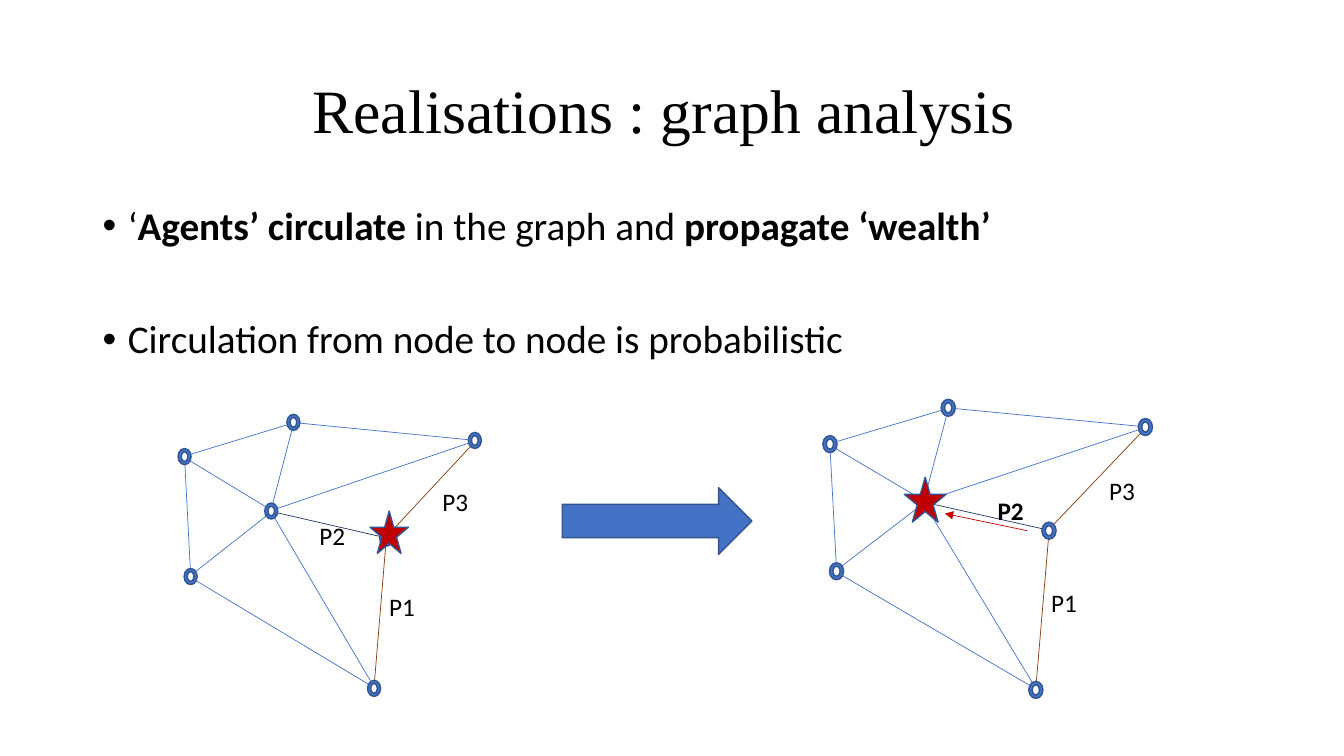
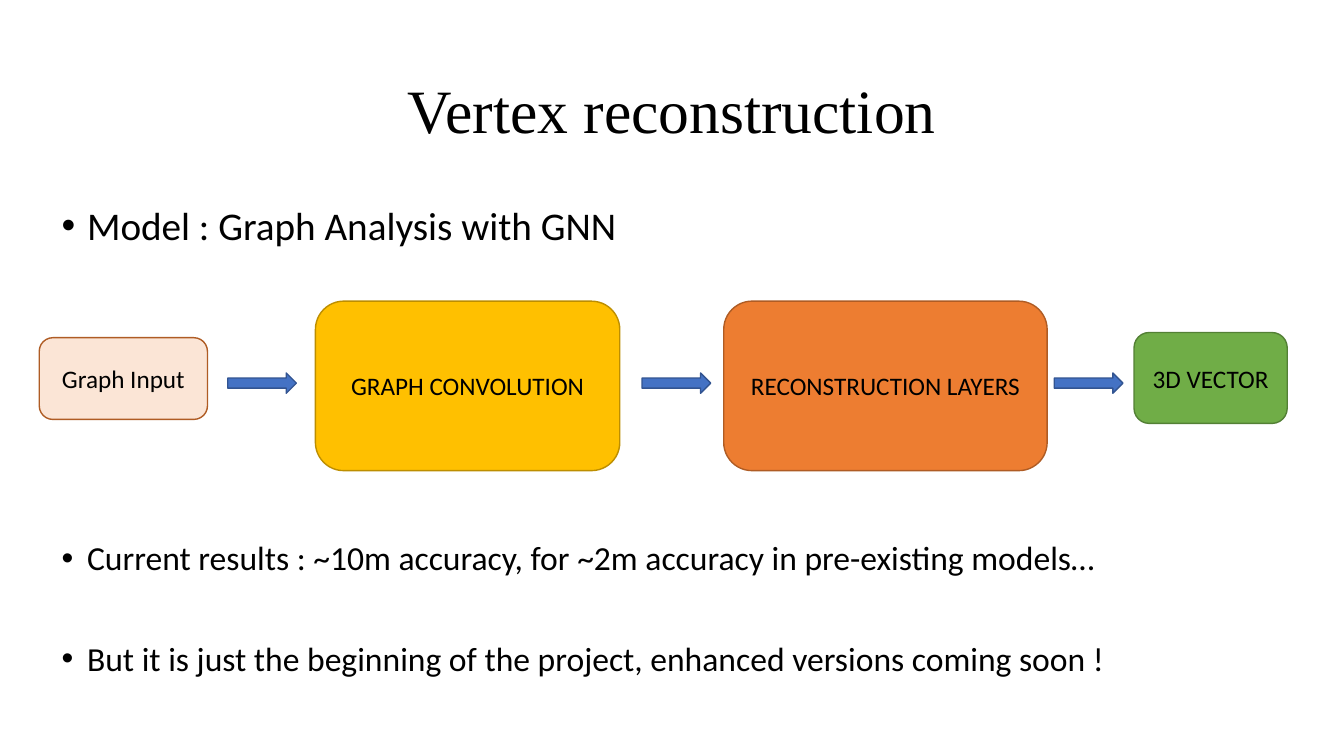
from math import hypot

from lxml.etree import SubElement
from pptx import Presentation
from pptx.dml.color import RGBColor
from pptx.enum.shapes import MSO_CONNECTOR, MSO_SHAPE
from pptx.enum.text import MSO_ANCHOR, MSO_AUTO_SIZE, PP_ALIGN
from pptx.oxml.ns import qn
from pptx.util import Cm, Pt

STRAIGHT = MSO_CONNECTOR.STRAIGHT
DONUT = MSO_SHAPE.DONUT
STAR = MSO_SHAPE.STAR_5_POINT
ARROW = MSO_SHAPE.RIGHT_ARROW
ROUND = MSO_SHAPE.ROUNDED_RECTANGLE
CENTER = PP_ALIGN.CENTER
MIDDLE = MSO_ANCHOR.MIDDLE
TOP = MSO_ANCHOR.TOP
NO_FIT = MSO_AUTO_SIZE.NONE

BLACK, BLUE, EDGE = "000000", "4472C4", "325491"
NAVY, BROWN, RED = "203864", "843C0B", "C00000"
SERIF, SANS = "Times New Roman", "Calibri"

GRID = (300, 280)
NODES = {
    "west": (6, 42), "north": (114, 8), "south": (12, 161),
    "east": (206, 123), "far": (294, 26), "hub": (92, 96),
    "base": (194, 272),
}
LINKS = [
    ("north", "far", BLUE), ("west", "hub", BLUE), ("south", "hub", BLUE),
    ("west", "north", BLUE), ("south", "base", BLUE), ("base", "east", BROWN),
    ("hub", "east", NAVY), ("east", "far", BROWN), ("hub", "far", BLUE),
    ("hub", "base", BLUE), ("west", "south", BLUE), ("hub", "north", BLUE),
]


def color(code):
    return RGBColor.from_string(code)


def style(runs, size, face=SANS, bold=False):
    for run in runs:
        run.font.size = Pt(size)
        run.font.name = face
        run.font.bold = bold
        run.font.color.rgb = color(BLACK)


def place(shape, box):
    shape.left, shape.top, shape.width, shape.height = map(Cm, box)


def add_form(shapes, kind, box, fill=BLUE, edge=EDGE):
    form = shapes.add_shape(kind, *map(Cm, box))
    form.shadow.inherit = False
    form.fill.solid()
    form.fill.fore_color.rgb = color(fill)
    form.line.color.rgb = color(edge)
    form.line.width = Pt(1)
    return form


def add_line(shapes, start, end, code, head=False):
    line = shapes.add_connector(STRAIGHT, *map(Cm, (*start, *end)))
    line.line.color.rgb = color(code)
    line.line.width = Pt(0.5)
    props = line._element.spPr
    if head:
        SubElement(props.find(qn("a:ln")), qn("a:tailEnd"), type="triangle")
    SubElement(props, qn("a:effectLst"))


def add_label(shapes, text, spot, bold):
    label = shapes.add_textbox(*map(Cm, (*spot, 1.4, 1.02)))
    frame = label.text_frame
    frame.word_wrap = True
    frame.text = text
    style(frame.paragraphs[0].runs, 18, bold=bold)


def add_page(deck, title, box, items):
    page = deck.slides.add_slide(deck.slide_layouts[1])
    head, body = page.placeholders
    place(head, (2.33, 1.02, 29.21, 3.68))
    head.text_frame.text = title
    head.text_frame.vertical_anchor = MIDDLE
    head.text_frame.auto_size = NO_FIT
    para = head.text_frame.paragraphs[0]
    para.alignment = CENTER
    para.line_spacing = 0.9
    style(para.runs, 44, SERIF)
    place(body, box)
    fill_list(body.text_frame, items)
    return page


def fill_list(frame, items):
    frame.auto_size = NO_FIT
    frame.vertical_anchor = TOP
    for i, (size, gap, parts) in enumerate(items):
        para = frame.paragraphs[0] if i == 0 else frame.add_paragraph()
        para.line_spacing = 0.9
        para.space_before = Pt(gap)
        props = para._p.get_or_add_pPr()
        props.set("marL", str(Cm(0.64)))
        props.set("indent", str(-Cm(0.64)))
        for text, bold in parts:
            run = para.add_run()
            run.text = text
            style([run], size, bold=bold)


def draw_graph(page, box, star, mid, bold=False, move=None):
    left, top, width, height = box
    wide, high = width / GRID[0], height / GRID[1]
    shapes = page.shapes.add_group_shape().shapes

    def spot(x, y):
        return left + x * wide, top + y * high

    def around(x, y, w, h):
        return (*spot(x - w / 2, y - h / 2), w * wide, h * high)

    def rim(start, end):
        (x, y), (u, v) = NODES[start], NODES[end]
        far = hypot(u - x, v - y)
        return spot(x + 6.5 * (u - x) / far, y + 8 * (v - y) / far)

    for x, y in NODES.values():
        add_form(shapes, DONUT, around(x, y, 13, 16))
    for start, end, code in LINKS:
        add_line(shapes, rim(start, end), rim(end, start), code)
    add_label(shapes, "P3", spot(252, 67), False)
    add_label(shapes, "P2", spot(*mid), bold)
    add_label(shapes, "P1", spot(199, 171), False)
    add_form(shapes, STAR, around(*star, 38, 42), RED)
    if move:
        add_line(shapes, spot(*move[0]), spot(*move[1]), RED, head=True)


def draw_flow(page, left, top):
    steps = [
        ("Graph Input", 0, 0.92, 4.24, 2.06, "FBE5D6", "AF5C24"),
        ("GRAPH CONVOLUTION", 6.96, 0, 7.67, 4.27, "FFC000", "BD8E00"),
        ("RECONSTRUCTION LAYERS", 17.25, 0, 8.15, 4.27, "ED7D31", "AF5C24"),
        ("3D VECTOR", 27.59, 0.79, 3.86, 2.29, "70AD47", "538035"),
    ]
    for text, x, y, width, height, fill, edge in steps:
        box = (left + x, top + y, width, height)
        frame = add_form(page.shapes, ROUND, box, fill, edge).text_frame
        frame.word_wrap = True
        frame.vertical_anchor = MIDDLE
        frame.text = text
        frame.paragraphs[0].alignment = CENTER
        style(frame.paragraphs[0].runs, 18)
    for x in (4.75, 15.19, 25.58):
        add_form(page.shapes, ARROW, (left + x, top + 1.81, 1.73, 0.51))


def graph_page(deck):
    page = add_page(deck, "Realisations : graph analysis ", (2.33, 5.08, 29.21, 12.09), [
        (28, 0, [("‘", False), ("Agents’ circulate ", True),
                 ("in the graph and ", False), ("propagate ‘wealth’", True)]),
        (28, 50.5, [("Circulation from node to node is probabilistic", False)]),
    ])
    draw_graph(page, (4.5, 10.44, 7.62, 7.11), (209, 117), (130, 100))
    draw_graph(page, (20.75, 10.06, 8.28, 7.54), (93, 94), (150, 85),
               bold=True, move=((186, 123), (111, 107)))
    add_form(page.shapes, ARROW, (14.17, 12.29, 4.78, 1.68))


def model_page(deck):
    page = add_page(deck, "Vertex reconstruction", (1.3, 5.08, 30.53, 12.09), [
        (28, 0, [("Model : Graph Analysis with GNN", False)]),
        (24, 209, [("Current results : ~10m accuracy, for ~2m accuracy "
                    "in pre-existing models…", False)]),
        (24, 46, [("But it is just the beginning of the project, "
                   "enhanced versions coming soon !", False)]),
    ])
    draw_flow(page, 0.99, 7.59)


def main():
    deck = Presentation()
    deck.slide_width, deck.slide_height = Cm(33.87), Cm(19.05)
    graph_page(deck)
    model_page(deck)
    deck.save("out.pptx")


if __name__ == "__main__":
    main()
